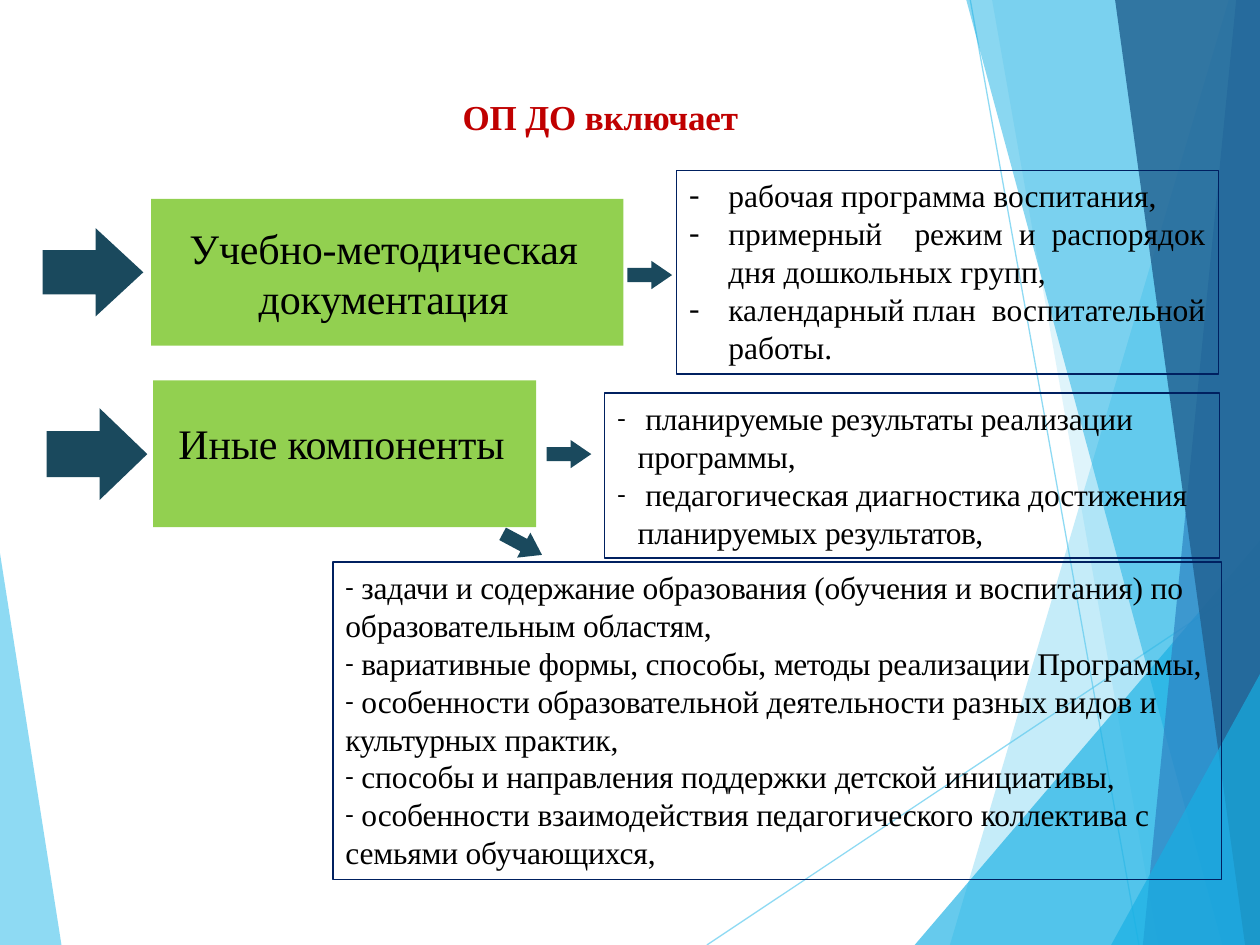
from lxml import etree
from pptx import Presentation
from pptx.dml.color import RGBColor
from pptx.enum.shapes import MSO_CONNECTOR, MSO_SHAPE
from pptx.enum.text import MSO_ANCHOR, MSO_AUTO_SIZE, PP_ALIGN
from pptx.oxml.ns import qn
from pptx.util import Cm, Pt

STRAIGHT = MSO_CONNECTOR.STRAIGHT
RECTANGLE, RIGHT_ARROW = MSO_SHAPE.RECTANGLE, MSO_SHAPE.RIGHT_ARROW
TOP, NO_FIT = MSO_ANCHOR.TOP, MSO_AUTO_SIZE.NONE
LEFT, CENTER, JUSTIFY = PP_ALIGN.LEFT, PP_ALIGN.CENTER, PP_ALIGN.JUSTIFY

SKY = RGBColor(0x5F, 0xCB, 0xEF)
CYAN = RGBColor(0x17, 0xB0, 0xE4)
BLUE = RGBColor(0x2E, 0x83, 0xC3)
DEEP_BLUE = RGBColor(0x22, 0x62, 0x92)
GREEN = RGBColor(0x92, 0xD0, 0x50)
TEAL = RGBColor(0x1A, 0x49, 0x5D)
NAVY = RGBColor(0x00, 0x20, 0x60)
RED = RGBColor(0xC0, 0x00, 0x00)
BLACK = RGBColor(0, 0, 0)
FONT = "Times New Roman"
W, H = 25.4, 19.05


def set_alpha(sp, percent):
    """Make the shape's solid colour partly opaque."""
    color = sp._element.spPr.find(".//" + qn("a:srgbClr"))
    etree.SubElement(color, qn("a:alpha"), val=str(percent * 1000))


def format_run(r, size, color, spacing=0.0, bold=False):
    r.font.name, r.font.size, r.font.bold = FONT, Pt(size), bold
    r.font.color.rgb = color
    if spacing:
        r._r.get_or_add_rPr().set("spc", str(round(spacing * 100)))


prs = Presentation()
prs.slide_width, prs.slide_height = Cm(W), Cm(H)
s = prs.slides.add_slide(prs.slide_layouts.get_by_name("Comparison"))
tree = s.shapes._spTree

# Background facets
for x1, y1, x2, y2 in [(14.25, H, W, 11.62), (19.56, 0, 22.96, H)]:
    line = s.shapes.add_connector(STRAIGHT, Cm(x1), Cm(y1), Cm(x2), Cm(y2))
    line.line.color.rgb = SKY
    line.line.width = Pt(0.75)
    set_alpha(line, 70)
    etree.SubElement(line._element.spPr, qn("a:effectLst"))

right_side = [(W, H), (W, 0)]
facets = [
    (SKY, 70, [(0, 11.15), (1.24, H), (0, H)]),
    (SKY, 36, [(24.77, 0), (19.15, H)] + right_side),
    (SKY, 20, [(20, 0), (23.35, H)] + right_side),
    (CYAN, 66, [(18.44, H), (W, 10.9), (W, H)]),
    (CYAN, 50, [(19.48, 0), (24.64, H)] + right_side),
    (BLUE, 70, [(24.92, 0), (23.04, H)] + right_side),
    (DEEP_BLUE, 82, [(22.48, 0), (25.1, H)] + right_side),
    (CYAN, 66, [(22.4, H), (W, 13.59), (W, H)]),
]
for color, opacity, points in facets:
    points = [(Cm(x), Cm(y)) for x, y in points]
    builder = s.shapes.build_freeform(*points[0])
    builder.add_line_segments(points[1:])
    sp = builder.convert_to_shape()
    sp.shadow.inherit = False
    sp.fill.solid()
    sp.fill.fore_color.rgb = color
    sp.line.fill.background()
    set_alpha(sp, opacity)

# Green blocks and arrows: left, top, width, height, rotation, arrow head ratio
blocks = [
    (RECTANGLE, GREEN, 3.05, 4.01, 9.52, 2.96, 0, None),
    (RECTANGLE, GREEN, 3.09, 7.67, 7.72, 2.96, 0, None),
    (RIGHT_ARROW, TEAL, 0.86, 4.6, 2.03, 1.78, 0, 0.54),
    (RIGHT_ARROW, TEAL, 0.94, 8.23, 2.03, 1.85, 0, 0.52),
    (RIGHT_ARROW, TEAL, 12.65, 5.26, 0.9, 0.57, 0, 0.73),
    (RIGHT_ARROW, TEAL, 11.02, 8.87, 0.9, 0.57, 0, 0.73),
    (RIGHT_ARROW, TEAL, 10.08, 10.69, 0.9, 0.57, 28.1, 0.73),
]
for kind, color, x, y, w, h, angle, head in blocks:
    sp = s.shapes.add_shape(kind, Cm(x), Cm(y), Cm(w), Cm(h))
    sp.shadow.inherit = False
    sp.fill.solid()
    sp.fill.fore_color.rgb = color
    sp.line.fill.background()
    sp.rotation = angle
    if head:
        sp.adjustments[0], sp.adjustments[1] = 0.5, head

# Title and block labels
title = s.shapes.title
tree.append(title._element)
captions = [
    (title, "ОП ДО включает", 4.39, 1.9, 15.42, 0.89, 20, RED),
    (None, "Учебно-методическая документация", 3.53, 4.45, 8.41, 2.08, 24, BLACK),
    (None, "Иные компоненты", 3.43, 8.38, 6.91, 1.07, 24, BLACK),
]
for sp, text, x, y, w, h, size, color in captions:
    box = Cm(x), Cm(y), Cm(w), Cm(h)
    sp = sp or s.shapes.add_textbox(*box)
    sp.left, sp.top, sp.width, sp.height = box
    tf = sp.text_frame
    tf.word_wrap, tf.auto_size, tf.vertical_anchor = True, NO_FIT, TOP
    tf.margin_left = tf.margin_right = tf.margin_bottom = 0
    tf.margin_top = Cm(0.03)
    tf.text = text
    p = tf.paragraphs[0]
    p.alignment, p.line_spacing = CENTER, Pt(size * 1.2)
    format_run(p.runs[0], size, color, -0.1, bold=sp is title)

# Lists: a paragraph is a list of (text, letter spacing) runs
program_parts = [
    [("рабочая программа воспитания,", 0)],
    [("примерный  режим и распорядок дня дошкольных групп,", 0)],
    [("календарный план  воспитательной работы.", 0)],
]
results = [
    [(" планируемые ", -0.1), ("результаты ", -0.3), ("реализации программы,", -0.1)],
    [(" педагогическая диагностика достижения планируемых ", -0.1),
     ("результатов,", -0.3)],
]
contents = [
    [(" задачи и ", -0.1), ("содержание ", -0.2),
     ("образования (обучения и воспитания) по образовательным областям,", -0.1)],
    [(" вариативные формы, способы, ", -0.1), ("методы ", -0.3),
     ("реализации Программы,", -0.1)],
    [(" особенности образовательной деятельности разных видов и ", -0.1),
     ("культурных ", -0.3), ("практик,", -0.1)],
    [(" способы и направления поддержки ", -0.1), ("детской ", -0.2),
     ("инициативы,", -0.1)],
    [(" особенности взаимодействия педагогического коллектива с "
      "семьями обучающихся", -0.1), (",", -0.3)],
]
# placeholder, paragraphs, left, top, width, height, alignment, indent, bullet %
lists = [
    (1, program_parts, 13.64, 3.43, 10.92, 4.11, JUSTIFY, 0.79, 100),
    (2, results, 12.19, 7.92, 12.4, 3.33, LEFT, 0.41, 80),
    (3, contents, 6.71, 11.33, 17.91, 6.4, LEFT, 0, 80),
]
bodies = {ph.placeholder_format.idx: ph for ph in s.placeholders}
for idx, paragraphs, x, y, w, h, align, indent, bullet in lists:
    sp = bodies[idx]
    tree.append(sp._element)
    sp.left, sp.top, sp.width, sp.height = Cm(x), Cm(y), Cm(w), Cm(h)
    sp.line.color.rgb = NAVY
    sp.line.width = Pt(0.75)
    tf = sp.text_frame
    tf.word_wrap, tf.auto_size, tf.vertical_anchor = True, NO_FIT, TOP
    for i, runs in enumerate(paragraphs):
        p = tf.add_paragraph() if i else tf.paragraphs[0]
        p.alignment, p.line_spacing, p.space_before = align, Pt(21.6), Pt(0)
        pPr = p._p.get_or_add_pPr()
        pPr.set("marL", str(Cm(indent)))
        pPr.set("indent", str(-Cm(indent)))
        etree.SubElement(pPr, qn("a:buSzPct"), val=str(bullet * 1000))
        etree.SubElement(pPr, qn("a:buFont"), typeface=FONT)
        etree.SubElement(pPr, qn("a:buChar"), char="-")
        for text, spacing in runs:
            r = p.add_run()
            r.text = text
            format_run(r, 18, BLACK, spacing)

tree.remove(bodies[4]._element)
prs.save("out.pptx")
